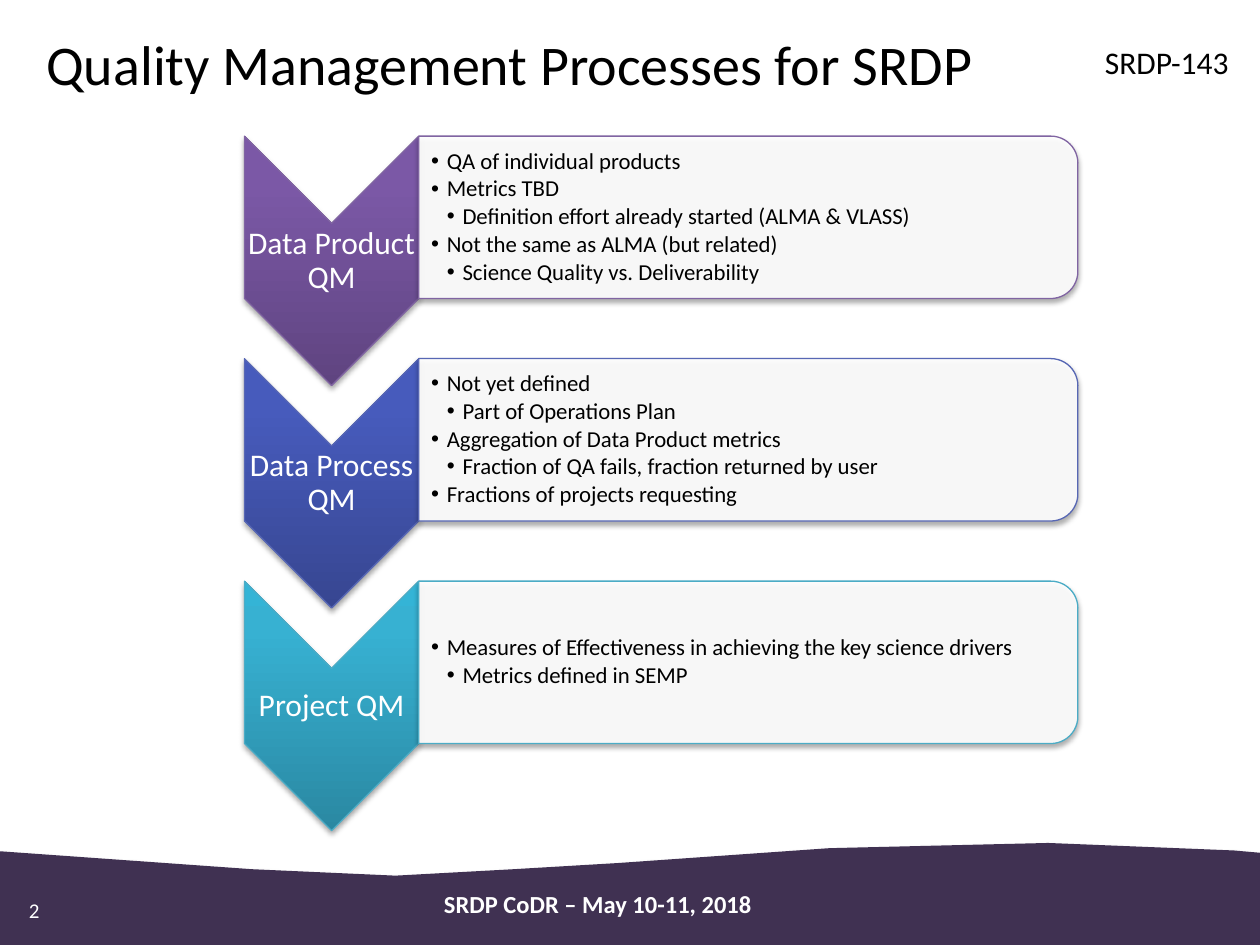
from dataclasses import dataclass

from lxml import etree
from pptx import Presentation
from pptx.dml.color import RGBColor
from pptx.enum.shapes import MSO_SHAPE
from pptx.enum.text import MSO_ANCHOR, PP_ALIGN
from pptx.oxml.ns import qn
from pptx.util import Pt

CHEVRON = MSO_SHAPE.CHEVRON
ROUNDED_END = MSO_SHAPE.ROUND_2_SAME_RECTANGLE
TOP, MIDDLE = MSO_ANCHOR.TOP, MSO_ANCHOR.MIDDLE
LEFT, CENTER, RIGHT = PP_ALIGN.LEFT, PP_ALIGN.CENTER, PP_ALIGN.RIGHT


@dataclass(frozen=True)
class Theme:
    font: str = "Calibri"
    ink: str = "000000"
    paper: str = "FFFFFF"
    wave: str = "403152"
    title: int = 32
    label: int = 18
    footer: int = 14
    bullet: int = 13
    number: int = 12
    outline: float = 0.75
    line_spacing: float = 0.9


THEME = Theme()

STAGES = [
    ("Data Product QM", "8064A2", ("5F4480", "7B58A6", "7C57A8"), [
        (0, "QA of individual products"),
        (0, "Metrics TBD"),
        (1, "Definition effort already started (ALMA & VLASS)"),
        (0, "Not the same as ALMA (but related)"),
        (1, "Science Quality vs. Deliverability"),
    ]),
    ("Data Process QM", "5767B4", ("374691", "475BBC", "455ABF"), [
        (0, "Not yet defined"),
        (1, "Part of Operations Plan"),
        (0, "Aggregation of Data Product metrics"),
        (1, "Fraction of QA fails, fraction returned by user"),
        (0, "Fractions of projects requesting"),
    ]),
    ("Project QM", "4BACC6", ("2A88A2", "37B1D2", "34B4D6"), [
        (0, "Measures of Effectiveness in achieving the key science drivers"),
        (1, "Metrics defined in SEMP"),
    ]),
]

WAVE_EDGE = [(0, 4.3), (150.5, 15), (232.5, 18.7), (300, 15), (359.5, 11.5),
             (480.5, 3), (605.5, 0), (711.5, 4.3), (736.5, 6.5),
             (736, 65.5), (1.5, 64)]


def set_all(target, values):
    for key, value in values.items():
        setattr(target, key, value)


def add_child(parent, tag, **attributes):
    return etree.SubElement(parent, qn(tag), {k: str(v) for k, v in attributes.items()})


def add_shadow(shape):
    shape.shadow.inherit = False
    effects = shape._element.spPr.find(qn("a:effectLst"))
    shadow = add_child(effects, "a:outerShdw", blurRad=Pt(3.1), dist=Pt(1.8),
                       dir=90 * 60000, rotWithShape=0)
    add_child(add_child(shadow, "a:srgbClr", val=THEME.ink), "a:alpha", val=35000)


def add_text_frame(slide, box, insets=(7.2, 3.6, 7.2, 3.6), anchor=TOP, wrap=True):
    frame = slide.shapes.add_textbox(*map(Pt, box)).text_frame
    sides = ("margin_left", "margin_top", "margin_right", "margin_bottom")
    set_all(frame, dict(zip(sides, map(Pt, insets))))
    set_all(frame, {"word_wrap": wrap, "vertical_anchor": anchor})
    return frame


def add_run(paragraph, text, size, color, bold=False):
    run = paragraph.add_run()
    run.text = text
    set_all(run.font, {"name": THEME.font, "size": Pt(size), "bold": bold})
    run.font.color.rgb = RGBColor.from_string(color)


def add_line(slide, box, text, size, color, align=LEFT, bold=False, spacing=None, **frame):
    paragraph = add_text_frame(slide, box, **frame).paragraphs[0]
    set_all(paragraph, {"alignment": align, "line_spacing": spacing})
    add_run(paragraph, text, size, color, bold)


def add_turned_shape(slide, preset, box, outline):
    left, top, width, height = box
    shift = (width - height) / 2
    shape = slide.shapes.add_shape(
        preset, Pt(left + shift), Pt(top - shift), Pt(height), Pt(width))
    shape.rotation = 90
    shape.line.color.rgb = RGBColor.from_string(outline)
    shape.line.width = Pt(THEME.outline)
    add_shadow(shape)
    return shape


def add_stage_arrow(slide, box, label, outline, shades):
    left, top, width, height = box
    arrow = add_turned_shape(slide, CHEVRON, box, outline)
    arrow.fill.gradient()
    arrow.fill.gradient_angle = 90
    gradient = arrow._element.spPr.find(qn("a:gradFill"))
    gradient.set("rotWithShape", "0")
    stops = gradient.find(qn("a:gsLst"))
    for stop in list(stops):
        stops.remove(stop)
    for percent, shade in zip((0, 80, 100), shades):
        add_child(add_child(stops, "a:gs", pos=percent * 1000), "a:srgbClr", val=shade)
    add_line(slide, (left, top + width / 2, width, height - width), label,
             THEME.label, THEME.paper, CENTER, spacing=THEME.line_spacing,
             insets=(0.9,) * 4, anchor=MIDDLE)


def add_stage_card(slide, box, outline, bullets):
    left, top, width, height = box
    card = add_turned_shape(slide, ROUNDED_END, box, outline)
    card.fill.solid()
    card.fill.fore_color.rgb = RGBColor.from_string(THEME.paper)
    fill = card._element.spPr.find(qn("a:solidFill"))
    add_child(fill[0], "a:alpha", val=90000)

    frame = add_text_frame(slide, (left, top + 4.7, width - 5, height - 9.4),
                           insets=(7, 0.9, 0.9, 0.9), anchor=MIDDLE)
    for index, (level, text) in enumerate(bullets):
        paragraph = frame.add_paragraph() if index else frame.paragraphs[0]
        properties = paragraph._p.get_or_add_pPr()
        properties.set("marL", str(Pt(9 * (level + 1))))
        properties.set("indent", str(-Pt(9)))
        add_child(properties, "a:buFont", typeface="Arial")
        add_child(properties, "a:buChar", char="•")
        set_all(paragraph, {"level": level, "line_spacing": THEME.line_spacing,
                            "space_after": Pt(1.75)})
        add_run(paragraph, text, THEME.bullet, THEME.ink)


def add_stages(slide, box):
    left, top, width, height = box
    arrow_width, arrow_height, card_height = 99.6, 142.5, 92.8
    pitch = (height - arrow_height) / (len(STAGES) - 1)
    for index, (label, outline, shades, bullets) in enumerate(STAGES):
        row_top = top + index * pitch
        add_stage_arrow(slide, (left, row_top, arrow_width, arrow_height),
                        label, outline, shades)
        add_stage_card(slide, (left + arrow_width, row_top, width - arrow_width, card_height),
                       outline, bullets)


def add_header(slide, box):
    left, top, width, height = box
    add_line(slide, (left, top, 680, height), "Quality Management Processes for SRDP",
             THEME.title, THEME.ink)
    add_line(slide, (left + width - 158.5, top + 7.7, 158.5, 29), "SRDP-143",
             THEME.label, THEME.ink, RIGHT)


def add_footer(slide, box):
    left, top, width, height = box
    points = [(Pt(left + x), Pt(top + y)) for x, y in WAVE_EDGE]
    builder = slide.shapes.build_freeform(*points[0])
    builder.add_line_segments(points[1:], close=True)
    wave = builder.convert_to_shape()
    wave.fill.solid()
    wave.fill.fore_color.rgb = RGBColor.from_string(THEME.wave)
    wave.line.fill.background()
    add_shadow(wave)
    add_line(slide, (left + 23, top + 31, 296.5, 17.3), "2", THEME.number, THEME.paper,
             insets=(0,) * 4, wrap=False)
    add_line(slide, (left + 143.3, top + 23, 409.7, 30), "SRDP CoDR – May 10-11, 2018",
             THEME.footer, THEME.paper, CENTER, bold=True)


def main():
    deck = Presentation()
    set_all(deck, {"slide_width": Pt(720), "slide_height": Pt(540)})
    slide = deck.slides.add_slide(deck.slide_layouts[6])
    add_footer(slide, (-6.5, 481.7, 736.5, 65.5))
    add_header(slide, (19.4, 13.5, 689.8, 37.4))
    add_stages(slide, (139.7, 77.8, 476.2, 396.8))
    deck.save("out.pptx")


if __name__ == "__main__":
    main()
